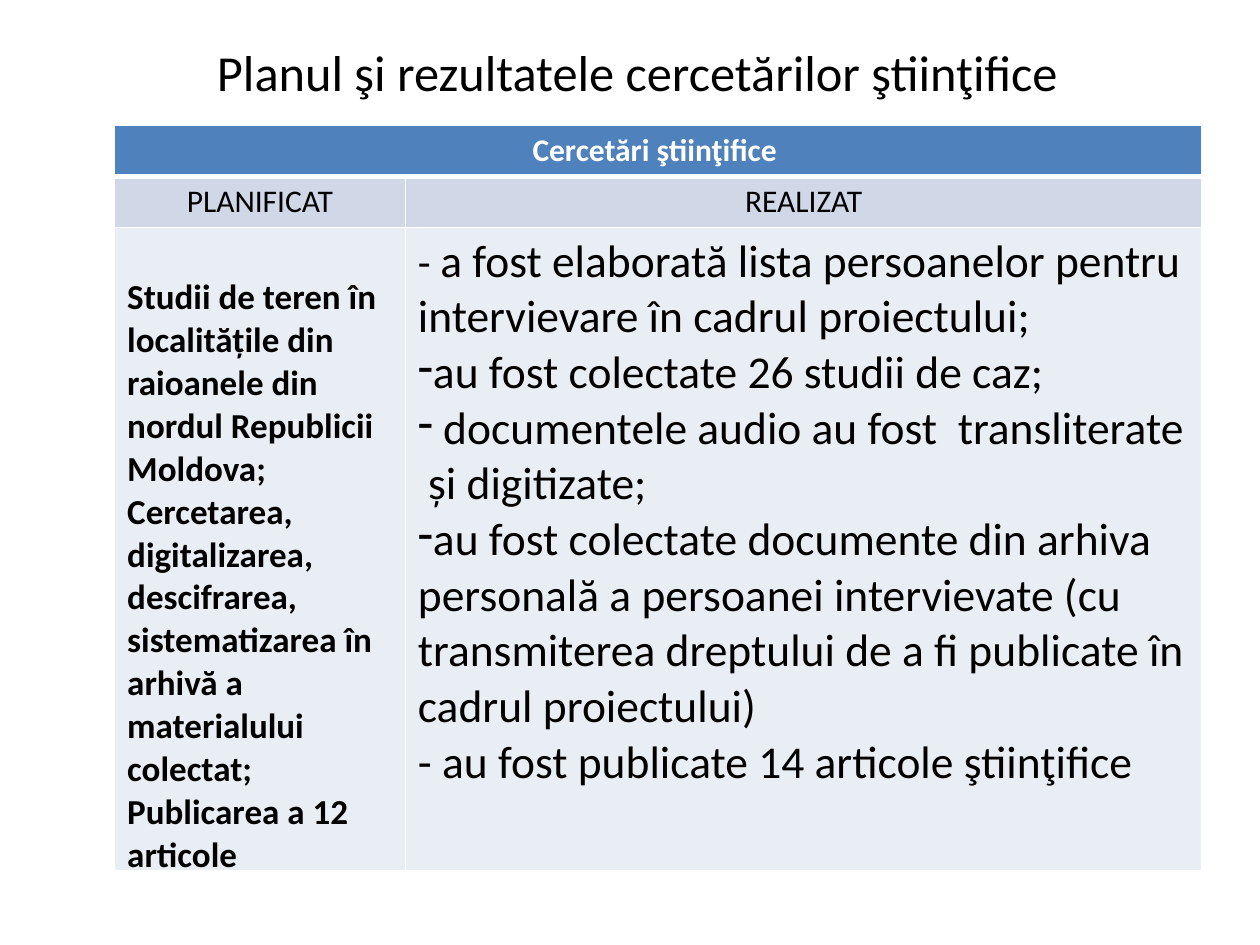
from lxml import etree
from pptx import Presentation
from pptx.dml.color import RGBColor
from pptx.enum.text import MSO_ANCHOR, PP_ALIGN
from pptx.oxml.ns import qn
from pptx.util import Pt

CENTER, LEFT = PP_ALIGN.CENTER, PP_ALIGN.LEFT
MIDDLE = MSO_ANCHOR.MIDDLE
FONT = "Calibri"
BLACK, WHITE = "000000", "FFFFFF"
HEADER_FILL, LABEL_FILL, BODY_FILL = "4F81BD", "D0D8E8", "E9EDF4"

PLANNED = [
    "Studii de teren în localitățile din raioanele din nordul Republicii Moldova; "
    "Cercetarea, digitalizarea, descifrarea, sistematizarea în arhivă a "
    "materialului colectat;",
    "Publicarea a 12 articole",
]
# Text of each result and whether its dash is a bullet
RESULTS = [
    ("- ", False),
    ("au fost colectate 26 studii de caz;", True),
    (" documentele audio au fost  transliterate  și digitizate;", True),
    ("au fost colectate documente din arhiva personală a persoanei intervievate "
     "(cu transmiterea dreptului de a fi publicate în cadrul proiectului)", True),
    ("- au fost publicate 14 articole ştiinţifice", False),
]
FIRST_RESULT = "a fost elaborată lista persoanelor pentru intervievare în cadrul proiectului;"


def color(hex_string):
    return RGBColor.from_string(hex_string)


def format_run(run, size, font_color=BLACK, bold=False):
    run.font.name = FONT
    run.font.size = Pt(size)
    run.font.bold = bold
    run.font.color.rgb = color(font_color)


def write(text_frame, lines, size, font_color=BLACK, bold=False, align=LEFT):
    text_frame.text = "\n".join(lines)
    for paragraph in text_frame.paragraphs:
        paragraph.alignment = align
        for run in paragraph.runs:
            format_run(run, size, font_color, bold)


def add_dash_bullet(paragraph):
    properties = paragraph._p.get_or_add_pPr()
    properties.set("marL", "0")
    properties.set("indent", "0")
    etree.SubElement(properties, qn("a:buChar"), char="-")


def style_cell(cell, fill, bottom_width=1):
    properties = cell._tc.get_or_add_tcPr()
    for side, width in (("L", 1), ("R", 1), ("T", 1), ("B", bottom_width)):
        line = etree.SubElement(properties, qn(f"a:ln{side}"), w=str(int(Pt(width))))
        solid = etree.SubElement(line, qn("a:solidFill"))
        etree.SubElement(solid, qn("a:srgbClr"), val=WHITE)
    cell.fill.solid()
    cell.fill.fore_color.rgb = color(fill)


def add_title(slide, text):
    shape = slide.shapes.add_textbox(Pt(25.2), Pt(21.6), Pt(678.24), Pt(38.88))
    text_frame = shape.text_frame
    text_frame.word_wrap = True
    text_frame.vertical_anchor = MIDDLE
    write(text_frame, [text], 28.8, align=CENTER)


def add_research_table(slide):
    widths, heights = (166.1, 455.3), (29.2, 29.2, 363)
    table = slide.shapes.add_table(
        len(heights), len(widths), Pt(65.5), Pt(71.6),
        Pt(sum(widths)), Pt(sum(heights))).table
    for column, width in zip(table.columns, widths):
        column.width = Pt(width)
    for row, height in zip(table.rows, heights):
        row.height = Pt(height)

    # Fills and borders, row by row
    row_styles = ((HEADER_FILL, 3), (LABEL_FILL, 1), (BODY_FILL, 1))
    for row, (fill, bottom_width) in zip(table.rows, row_styles):
        for cell in row.cells:
            style_cell(cell, fill, bottom_width)

    # Header and column labels
    header = table.cell(0, 0)
    header.merge(table.cell(0, 1))
    write(header.text_frame, ["Cercetări ştiinţifice "], 18, WHITE, True, CENTER)
    for index, label in enumerate(("PLANIFICAT", "REALIZAT")):
        write(table.cell(1, index).text_frame, [label], 18, align=CENTER)

    # Planned work
    planned = table.cell(2, 0)
    planned.margin_top = Pt(28)
    write(planned.text_frame, PLANNED, 20, bold=True)

    # Results
    results = table.cell(2, 1).text_frame
    write(results, [text for text, _ in RESULTS], 26)
    for paragraph, (_, bulleted) in zip(results.paragraphs, RESULTS):
        if bulleted:
            add_dash_bullet(paragraph)
    first = results.paragraphs[0]
    first.runs[0].font.size = Pt(24)
    run = first.add_run()
    run.text = FIRST_RESULT
    format_run(run, 26)


def main():
    presentation = Presentation()
    presentation.slide_width, presentation.slide_height = Pt(720), Pt(540)
    slide = presentation.slides.add_slide(presentation.slide_layouts[6])
    add_title(slide, "Planul şi rezultatele cercetărilor ştiinţifice")
    add_research_table(slide)
    presentation.save("out.pptx")


if __name__ == "__main__":
    main()
